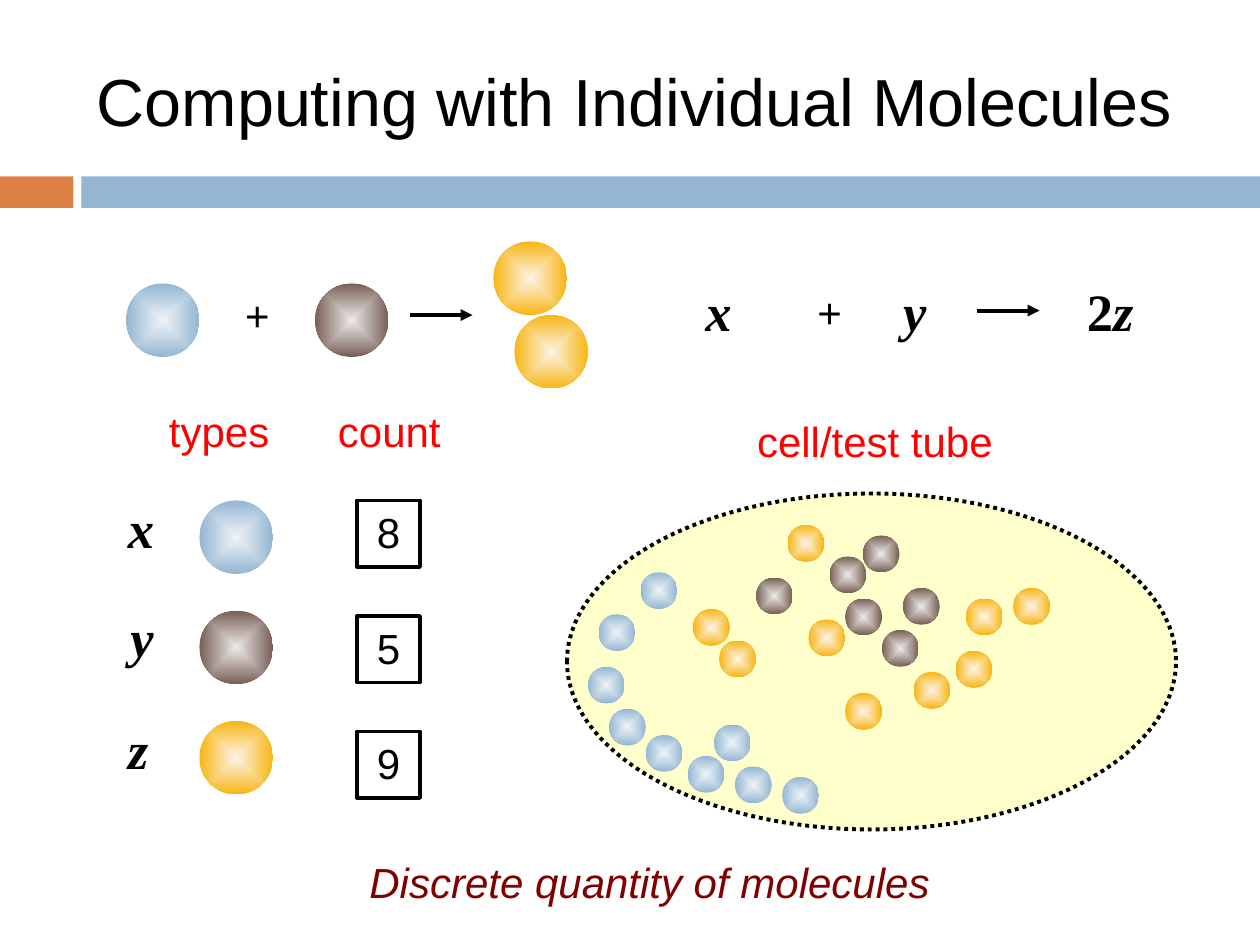
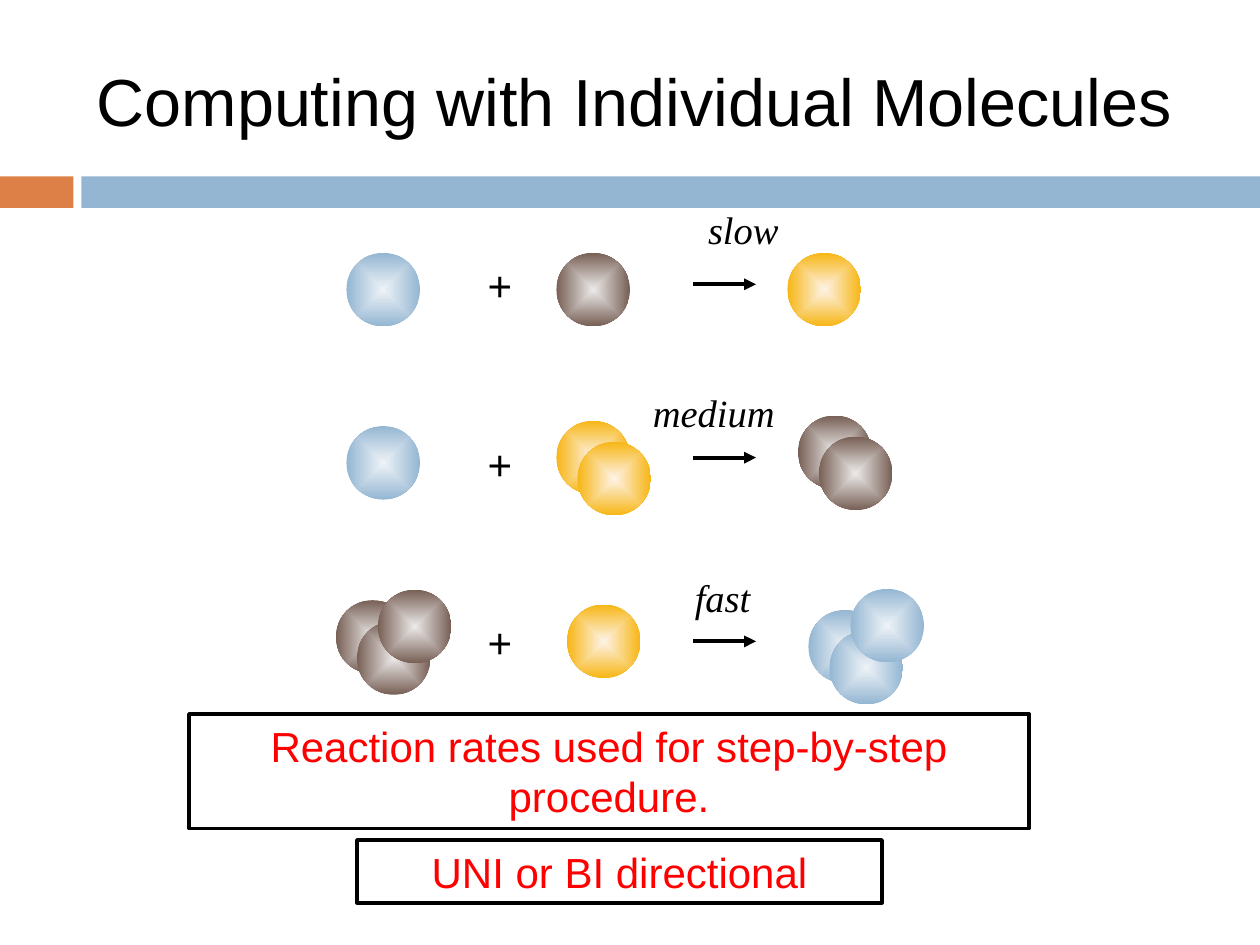
from pptx import Presentation
from pptx.dml.color import RGBColor
from pptx.enum.dml import MSO_LINE as Dash
from pptx.enum.shapes import MSO_CONNECTOR as Link, MSO_SHAPE as Form
from pptx.enum.text import MSO_ANCHOR as Anchor, MSO_AUTO_SIZE as Fit, PP_ALIGN as Align
from pptx.oxml import parse_xml
from pptx.oxml.ns import nsdecls
from pptx.util import Pt

tint = RGBColor.from_string
BLACK, RED, WHITE = "000000", "FF0000", "FFFFFF"
ORANGE, SKY = "DD8047", "94B6D2"

# Molecule colours: centre and rim
BLUE, BROWN, GOLD = ("EEF3F7", SKY), ("ECEAE9", "775F55"), ("FDF3E8", "F7B615")
BIG, SMALL = 42, 21

# Text styles: size, font, colour, bold, italic
TITLE = (38, "Arial", BLACK, False, False)
PLAIN = (24, "Arial", BLACK, False, False)
LABEL = (24, "Arial", RED, False, False)
CLAIM = (24, "Arial", "800000", False, True)
DIGIT = (30, "Times New Roman", BLACK, True, False)
MATH = (30, "Times New Roman", BLACK, True, True)
RATE = (22, "Times New Roman", BLACK, False, True)


def write(shape, text, style, align=Align.LEFT, wrap=True):
    frame = shape.text_frame
    frame.text = text
    frame.word_wrap = wrap
    frame.auto_size = Fit.NONE
    para = frame.paragraphs[0]
    para.alignment = align
    font = para.runs[0].font
    size, font.name, shade, font.bold, font.italic = style
    font.size = Pt(size)
    font.color.rgb = tint(shade)
    return para


def ball(slide, x, y, size, shades):
    dot = slide.shapes.add_shape(Form.OVAL, Pt(x), Pt(y), Pt(size), Pt(size))
    core, rim = shades
    dot.element.spPr.insert(2, parse_xml(
        f'<a:gradFill {nsdecls("a")} rotWithShape="1"><a:gsLst>'
        f'<a:gs pos="0"><a:srgbClr val="{core}"/></a:gs>'
        f'<a:gs pos="100000"><a:srgbClr val="{rim}"/></a:gs></a:gsLst>'
        '<a:path path="shape"><a:fillToRect l="50000" t="50000" r="50000" b="50000"/>'
        '</a:path></a:gradFill>'))
    dot.line.fill.background()
    dot.shadow.inherit = False


deck = Presentation()
deck.slide_width, deck.slide_height = Pt(720), Pt(540)
layout = deck.slide_layouts[5]
count, rates = [deck.slides.add_slide(layout) for _ in range(2)]

# Shared bands, moved to the layout
for x, w, shade in [(0, 42, ORANGE), (46.5, 673.5, SKY)]:
    band = count.shapes.add_shape(Form.RECTANGLE, Pt(x), Pt(100.8), Pt(w), Pt(18))
    band.fill.solid()
    band.fill.fore_color.rgb = tint(shade)
    band.line.fill.background()
    band.shadow.inherit = False
    layout.shapes.element.append(band.element)

# Titles
for slide in (count, rates):
    head = slide.shapes.title
    head.left, head.top, head.width, head.height = Pt(48), Pt(18), Pt(642), Pt(78)
    write(head, "Computing with Individual Molecules", TITLE)
    head.text_frame.vertical_anchor = Anchor.MIDDLE

# Test tube
tube = count.shapes.add_shape(Form.OVAL, Pt(324), Pt(282), Pt(348), Pt(192))
tube.fill.solid()
tube.fill.fore_color.rgb = tint("FFFFCC")
tube.line.color.rgb = tint(BLACK)
tube.line.width = Pt(2.25)
tube.line.dash_style = Dash.ROUND_DOT
tube.shadow.inherit = False

# Molecules, grouped by slide, size and type
groups = [
    (count, SMALL, BLUE, [(366, 327), (342, 351), (336, 381), (348, 405), (369, 420),
                          (393, 432), (420, 438), (447, 444), (408, 414)]),
    (count, SMALL, BROWN, [(432, 330), (474, 318), (493, 306), (516, 336), (483, 342),
                           (504, 360)]),
    (count, SMALL, GOLD, [(450, 300), (462, 354), (483, 396), (522, 384), (552, 342),
                          (546, 372), (579, 336), (411, 366), (396, 348)]),
    (count, BIG, BLUE, [(72, 162), (114, 286)]),
    (count, BIG, BROWN, [(180, 162), (114, 349)]),
    (count, BIG, GOLD, [(282, 138), (294, 180), (114, 412)]),
    (rates, BIG, BLUE, [(198, 144.5), (198, 243.5), (462, 348.5), (474, 360.5),
                        (486, 336.5)]),
    (rates, BIG, BROWN, [(318, 144.5), (456, 237.5), (468, 249.5), (192, 343),
                         (204, 355), (216, 337)]),
    (rates, BIG, GOLD, [(450, 144.5), (318, 240.5), (330, 252.5), (324, 345.5)]),
]
for slide, size, shades, spots in groups:
    for x, y in spots:
        ball(slide, x, y, size, shades)

# Reaction arrows
for slide, x, y in [(count, 234, 180), (count, 558, 177.5),
                    (rates, 396, 162.5), (rates, 396, 261.5), (rates, 396, 366.5)]:
    arrow = slide.shapes.add_connector(Link.STRAIGHT, Pt(x), Pt(y), Pt(x + 36), Pt(y))
    arrow.line.color.rgb = tint(BLACK)
    arrow.line.width = Pt(2.25)
    props = arrow.element.spPr
    props.get_or_add_ln().append(parse_xml(f'<a:tailEnd {nsdecls("a")} type="triangle"/>'))
    props.append(parse_xml(f'<a:effectLst {nsdecls("a")}/>'))

# Boxed text: counts, then conclusions
boxes = [(count, 204, 286 + 66 * i, 36, 38, num, PLAIN, 2.25)
         for i, num in enumerate("859")]
boxes += [
    (rates, 108, 408, 480, 65.5, "Reaction rates used for step-by-step procedure.", LABEL, 2),
    (rates, 204, 480, 300, 36, "UNI or BI directional", LABEL, 2),
]
for slide, x, y, w, h, text, style, edge in boxes:
    box = slide.shapes.add_shape(Form.RECTANGLE, Pt(x), Pt(y), Pt(w), Pt(h))
    if slide is count:
        box.fill.solid()
        box.fill.fore_color.rgb = tint(WHITE)
    else:
        box.fill.background()
    box.line.color.rgb = tint(BLACK)
    box.line.width = Pt(edge)
    box.shadow.inherit = False
    write(box, text, style, Align.CENTER)
    box.text_frame.vertical_anchor = Anchor.TOP

# Free text: slide, left, top, width, height, wording, style
words = [
    (count, 425.5, 234, 150.5, 36.5, "cell/test tube", LABEL),
    (count, 89.5, 228, 72.5, 36.5, "types", LABEL),
    (count, 186, 228, 73.5, 36, "count", LABEL),
    (count, 204, 486, 338.5, 36, "Discrete quantity of molecules", CLAIM),
    (count, 133, 162, 29, 36, "+", PLAIN),
    (count, 460, 160, 29, 36, "+", PLAIN),
    (count, 66, 280, 29.5, 44, "x", MATH),
    (count, 67.5, 342, 28, 44, "y", MATH),
    (count, 66, 406, 26, 44, "z", MATH),
    (count, 396, 156, 29.5, 44, "x", MATH),
    (count, 509, 156, 28, 44, "y", MATH),
    (count, 614, 156, 41, 44, "2", DIGIT),
    (rates, 397.5, 114, 54.5, 34, "slow", RATE),
    (rates, 366, 219, 88, 34, "medium", RATE),
    (rates, 390, 324.5, 47.5, 34, "fast", RATE),
]
words += [(rates, 271.5, y, 29, 36, "+", PLAIN) for y in (144.5, 247, 348.5)]
for slide, x, y, w, h, text, style in words:
    note = slide.shapes.add_textbox(Pt(x), Pt(y), Pt(w), Pt(h))
    para = write(note, text, style, wrap=False)
    if text == "2":
        run = para.add_run()
        run.text = "z"
        size, run.font.name, shade, run.font.bold, run.font.italic = MATH
        run.font.size = Pt(size)
        run.font.color.rgb = tint(shade)

deck.save("out.pptx")
